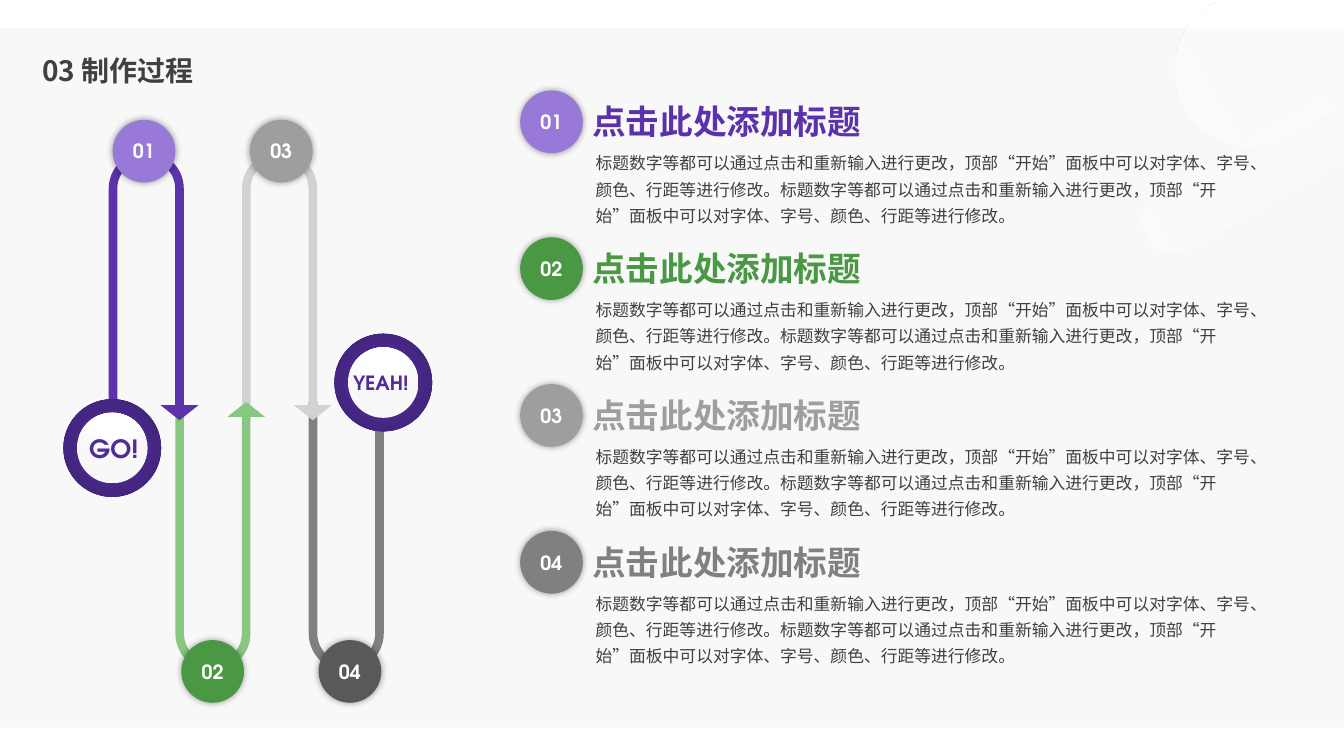
from math import cos, radians, sin

from lxml import etree
from pptx import Presentation
from pptx.dml.color import RGBColor
from pptx.enum.shapes import MSO_SHAPE as SHAPE
from pptx.enum.text import MSO_ANCHOR as ANCHOR, PP_ALIGN as ALIGN
from pptx.oxml import parse_xml
from pptx.oxml.ns import qn
from pptx.util import Cm, Pt

WHITE = RGBColor(0xFF, 0xFF, 0xFF)
BAND = RGBColor(0xF8, 0xF8, 0xF8)
INK = RGBColor(0x40, 0x40, 0x40)
PURPLE = RGBColor(0x5B, 0x32, 0xAB)
LILAC = RGBColor(0x99, 0x79, 0xD8)
DEEP = RGBColor(0x51, 0x2C, 0x98)
DARK_PURPLE = RGBColor(0x44, 0x25, 0x80)
DARKEST_PURPLE = RGBColor(0x40, 0x23, 0x78)
GREEN = RGBColor(0x4A, 0x97, 0x44)
LIGHT_GREEN = RGBColor(0x87, 0xC7, 0x82)
SILVER = RGBColor(0xD2, 0xD2, 0xD2)
GRAY = RGBColor(0x9E, 0x9E, 0x9E)
MID_GRAY = RGBColor(0x80, 0x80, 0x80)
DARK_GRAY = RGBColor(0x59, 0x59, 0x59)

CJK = "Noto Sans CJK SC"
LATIN = "TeX Gyre Adventor"
NS = 'xmlns:a="http://schemas.openxmlformats.org/drawingml/2006/main"'
BALL = 1.58
RING = 2.46
RIM = 0.34

HEADING = "点击此处添加标题"
SENTENCE = "标题数字等都可以通过点击和重新输入进行更改，顶部“开始”面板中可以对字体、字号、颜色、行距等进行修改。"
STEPS = [
    (LILAC, PURPLE),
    (GREEN, GREEN),
    (GRAY, GRAY),
    (MID_GRAY, MID_GRAY),
]
TRACK = [
    (PURPLE, LILAC),
    (LIGHT_GREEN, GREEN),
    (SILVER, GRAY),
    (MID_GRAY, DARK_GRAY),
]
RIM_STOPS = [(0, DEEP, 100), (23, DEEP, 100), (69, DARK_PURPLE, 100), (97, DARKEST_PURPLE, 100)]
DISC_STOPS = [(0, WHITE, 100), (35, WHITE, 100), (100, BAND, 100)]
PILL_STOPS = [(0, WHITE, 50), (21, WHITE, 29), (85, WHITE, 0), (100, WHITE, 0)]
LINEAR = '<a:lin ang="0" scaled="0"/>'


def radial(top, bottom):
    return (f'<a:path path="circle"><a:fillToRect l="50000" t="{top * 1000}" '
            f'r="50000" b="{bottom * 1000}"/></a:path>')


def write(tf, text, size=12, color=INK, font=LATIN, bold=False, align=ALIGN.LEFT,
          anchor=ANCHOR.TOP, spacing=1.0, wrap=True):
    tf.word_wrap = wrap
    tf.vertical_anchor = anchor
    p = tf.paragraphs[0]
    p.alignment = align
    p.line_spacing = spacing
    r = p.add_run()
    r.text = text
    r.font.size = Pt(size)
    r.font.bold = bold
    r.font.name = font
    r.font.color.rgb = color
    etree.SubElement(r.font._element, qn("a:ea"), typeface=CJK)


def add_text(shapes, text, x, y, w, h, **fmt):
    s = shapes.add_textbox(Cm(x), Cm(y), Cm(w), Cm(h))
    write(s.text_frame, text, **fmt)


def add_solid(shapes, kind, x, y, w, h, color):
    s = shapes.add_shape(kind, Cm(x), Cm(y), Cm(w), Cm(h))
    s.shadow.inherit = False
    s.fill.solid()
    s.fill.fore_color.rgb = color
    s.line.fill.background()
    return s


def set_gradient(s, stops, direction):
    gs = "".join(
        f'<a:gs pos="{pos * 1000}"><a:srgbClr val="{color}">'
        f'<a:alpha val="{alpha * 1000}"/></a:srgbClr></a:gs>'
        for pos, color, alpha in stops)
    s.fill.background()
    old = s._element.spPr.find(qn("a:noFill"))
    new = parse_xml(f'<a:gradFill {NS} rotWithShape="1"><a:gsLst>{gs}</a:gsLst>'
                    f'{direction}</a:gradFill>')
    s._element.spPr.replace(old, new)


def add_pill(shapes, x, y, w, h):
    r = h / 2
    arc = [(r + r * cos(radians(a)), r - r * sin(radians(a))) for a in range(90, 271, 5)]
    points = [(Cm(x + px), Cm(y + py)) for px, py in arc + [(w, h), (w, 0)]]
    builder = shapes.build_freeform(*points[0])
    builder.add_line_segments(points[1:], close=True)
    s = builder.convert_to_shape()
    s.shadow.inherit = False
    s.line.fill.background()
    s.rotation = 330
    set_gradient(s, PILL_STOPS, LINEAR)


def add_uturn(shapes, x, y, color, flipped):
    s = add_solid(shapes, SHAPE.U_TURN_ARROW, x, y, 2.26, 6.78, color)
    for i, value in enumerate([0.096, 0.21, 0.167, 0.438, 1]):
        s.adjustments[i] = value
    if flipped:
        s._element.spPr.xfrm.set("flipV", "1")


def add_ball(shapes, number, x, y, color):
    s = add_solid(shapes, SHAPE.OVAL, x, y, BALL, BALL, color)
    s._element.spPr.find(qn("a:effectLst")).append(parse_xml(
        f'<a:outerShdw {NS} blurRad="63500" dist="0" dir="0" algn="ctr" rotWithShape="0">'
        '<a:srgbClr val="000000"><a:alpha val="40000"/></a:srgbClr></a:outerShdw>'))
    tf = s.text_frame
    tf.margin_left = tf.margin_right = 0
    write(tf, f"{number:02}", size=14, color=WHITE, bold=True,
          align=ALIGN.CENTER, anchor=ANCHOR.MIDDLE)


def add_ring(shapes, text, x, y, size, dx):
    group = shapes.add_group_shape().shapes
    disc = RING - 2 * RIM
    rim = add_solid(group, SHAPE.OVAL, x, y, RING, RING, DEEP)
    set_gradient(rim, RIM_STOPS, radial(50, 50))
    inner = add_solid(group, SHAPE.OVAL, x + RIM, y + RIM, disc, disc, WHITE)
    set_gradient(inner, DISC_STOPS, radial(-80, 180))
    add_text(group, text, x + dx, y, RING, RING, size=size, color=DEEP, bold=True,
             align=ALIGN.CENTER, anchor=ANCHOR.MIDDLE, wrap=False)


def add_step(shapes, number, y, ball_color, color):
    add_text(shapes, SENTENCE * 2, 14.76, y + 1.3, 17.37, 2.26, font=CJK, spacing=1.3)
    group = shapes.add_group_shape().shapes
    add_text(group, HEADING, 14.68, y + 0.14, 7.34, 1.28, size=24, color=color,
             bold=True, wrap=False)
    add_ball(group, number, 13.11, y, ball_color)


def main():
    prs = Presentation()
    prs.slide_width = Cm(33.87)
    prs.slide_height = Cm(19.05)
    shapes = prs.slides.add_slide(prs.slide_layouts[6]).shapes

    add_solid(shapes, SHAPE.RECTANGLE, 0, 0.71, 33.87, 17.63, BAND)
    add_pill(shapes, 27.84, -6.73, 30.15, 3.84)
    add_pill(shapes, 27.99, 1.73, 13.39, 1.7)
    add_text(shapes, "03 制作过程", 0.81, 1.09, 12.67, 1.47, size=20, font=CJK,
             bold=True, anchor=ANCHOR.MIDDLE, spacing=0.9)

    for i, (color, _) in reversed(list(enumerate(TRACK))):
        add_uturn(shapes, 2.74 + 1.68 * i, 10.13 if i % 2 else 3.81, color, i % 2)
    for i, (_, color) in enumerate(TRACK):
        add_ball(shapes, i + 1, 2.84 + 1.73 * i, 16.13 if i % 2 else 3.02, color)
    for i, (ball_color, color) in enumerate(STEPS):
        add_step(shapes, i + 1, 2.28 + 3.7 * i, ball_color, color)
    add_ring(shapes, "GO!", 1.6, 10.06, 18, 0.04)
    add_ring(shapes, "YEAH!", 8.43, 8.41, 14, -0.06)

    prs.save("out.pptx")


if __name__ == "__main__":
    main()
